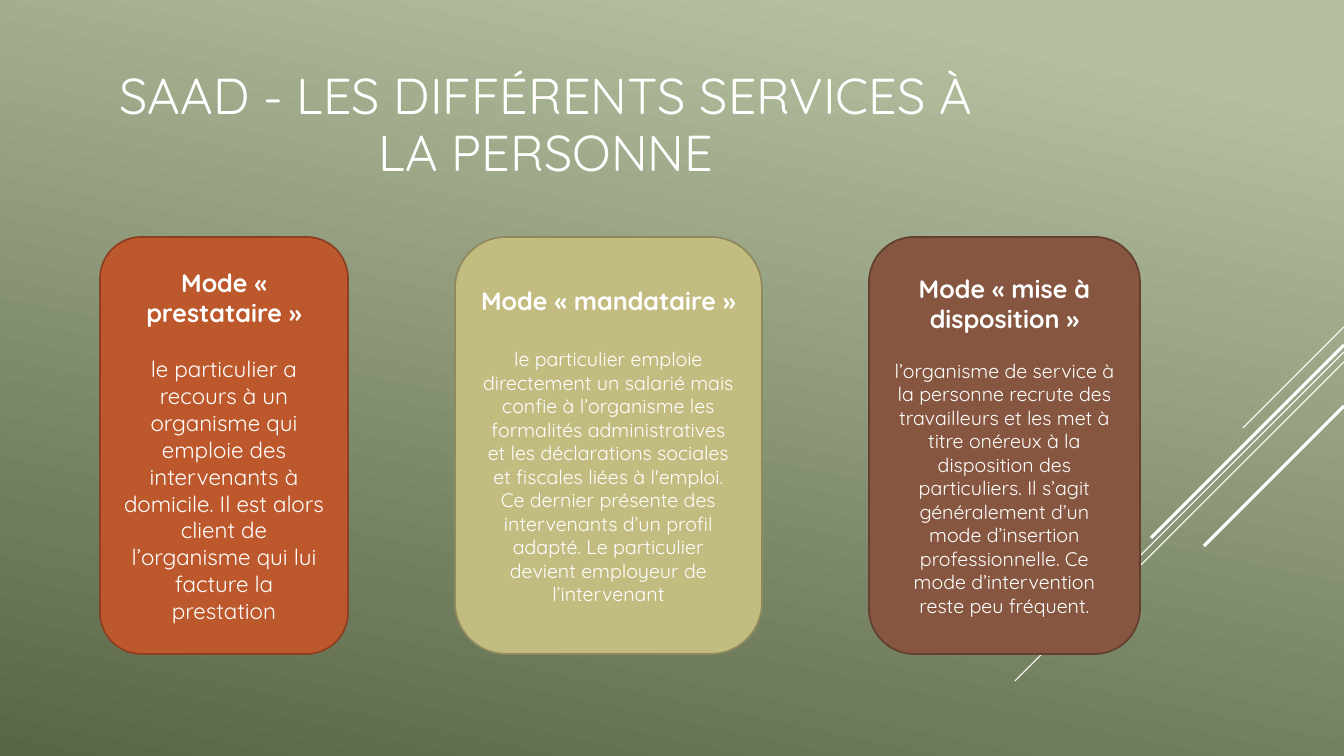
"""Slide presenting the three modes of home care services."""
import pptx
import pptx.dml.color
import pptx.enum.shapes
import pptx.enum.text
import pptx.oxml
import pptx.util

EMU_PER_PX = 914400 / 100.8
COLOURS = {
    "light green": "B5C0A0",
    "dark green": "586646",
    "white": "FFFFFF",
    "orange": "BD582C",
    "orange edge": "8C3F21",
    "sand": "C2BC80",
    "sand edge": "90885F",
    "brown": "865640",
    "brown edge": "633F2F",
}


def px(length):
    return pptx.util.Emu(round(length * EMU_PER_PX))


def write(paragraph, text, size, bold=False, space_before=0, line_spacing=1.0):
    paragraph.alignment = pptx.enum.text.PP_ALIGN.CENTER
    paragraph.space_before = pptx.util.Pt(space_before)
    paragraph.line_spacing = line_spacing
    run = paragraph.add_run()
    run.text = text
    run.font.name = "Quicksand"
    run.font.size = pptx.util.Pt(size)
    run.font.bold = bold
    run.font.color.rgb = pptx.dml.color.RGBColor.from_string(COLOURS["white"])


presentation = pptx.Presentation()
presentation.slide_width = px(1344)
presentation.slide_height = px(756)
slide = presentation.slides.add_slide(presentation.slide_layouts[6])

background = slide.background.fill
background.gradient()
background.gradient_angle = 258
stops = [(0.1, "light green"), (1, "dark green")]
for stop, (position, colour) in zip(background.gradient_stops, stops):
    stop.position = position
    stop.color.rgb = pptx.dml.color.RGBColor.from_string(COLOURS[colour])

diagonals = [
    (327, 101, 0.75),
    (352, 329, 0.75),
    (362, 209, 0.75),
    (345, 193, 2.25),
    (406, 140, 2.25),
]
for top, run_length, width in diagonals:
    line = slide.shapes.add_connector(
        pptx.enum.shapes.MSO_CONNECTOR.STRAIGHT,
        px(1344), px(top), px(1344 - run_length), px(top + run_length))
    line.line.color.rgb = pptx.dml.color.RGBColor.from_string(COLOURS["white"])
    line.line.width = pptx.util.Pt(width)
    properties = line._element.spPr
    properties.append(pptx.oxml.parse_xml(
        '<a:effectLst xmlns:a="http://schemas.openxmlformats.org/drawingml/2006/main"/>'))

title = slide.shapes.add_textbox(px(76), px(43), px(940), px(166))
title.text_frame.word_wrap = True
title.text_frame.vertical_anchor = pptx.enum.text.MSO_ANCHOR.MIDDLE
write(title.text_frame.paragraphs[0], "SAAD - LES DIFFÉRENTS SERVICES À LA PERSONNE",
      size=36, line_spacing=0.95)

cards = [
    (100, 248, "orange", "Mode « prestataire »", 16, 20,
     "le particulier a recours à un organisme qui emploie des intervenants à domicile. "
     "Il est alors client de l’organisme qui lui facture la prestation"),
    (455, 307, "sand", "Mode « mandataire »", 14, 22.5,
     "le particulier emploie directement un salarié mais confie à l’organisme les "
     "formalités administratives et les déclarations sociales et fiscales liées à "
     "l'emploi. Ce dernier présente des intervenants d’un profil adapté. "
     "Le particulier devient employeur de l’intervenant"),
    (869, 271, "brown", "Mode « mise à disposition »", 14, 17.5,
     "l’organisme de service à la personne recrute des travailleurs et les met à titre "
     "onéreux à la disposition des particuliers. Il s’agit généralement d’un mode "
     "d’insertion professionnelle. Ce mode d’intervention reste peu fréquent."),
]
for left, width, colour, heading, size, gap, description in cards:
    card = slide.shapes.add_shape(
        pptx.enum.shapes.MSO_SHAPE.ROUNDED_RECTANGLE,
        px(left), px(237), px(width), px(417))
    card.shadow.inherit = False
    card.fill.solid()
    card.fill.fore_color.rgb = pptx.dml.color.RGBColor.from_string(COLOURS[colour])
    card.line.color.rgb = pptx.dml.color.RGBColor.from_string(COLOURS[f"{colour} edge"])
    card.line.width = pptx.util.Pt(1.25)
    frame = card.text_frame
    frame.word_wrap = True
    frame.vertical_anchor = pptx.enum.text.MSO_ANCHOR.MIDDLE
    write(frame.paragraphs[0], heading, size=18, bold=True)
    write(frame.add_paragraph(), description, size=size, space_before=gap)

presentation.save("out.pptx")
